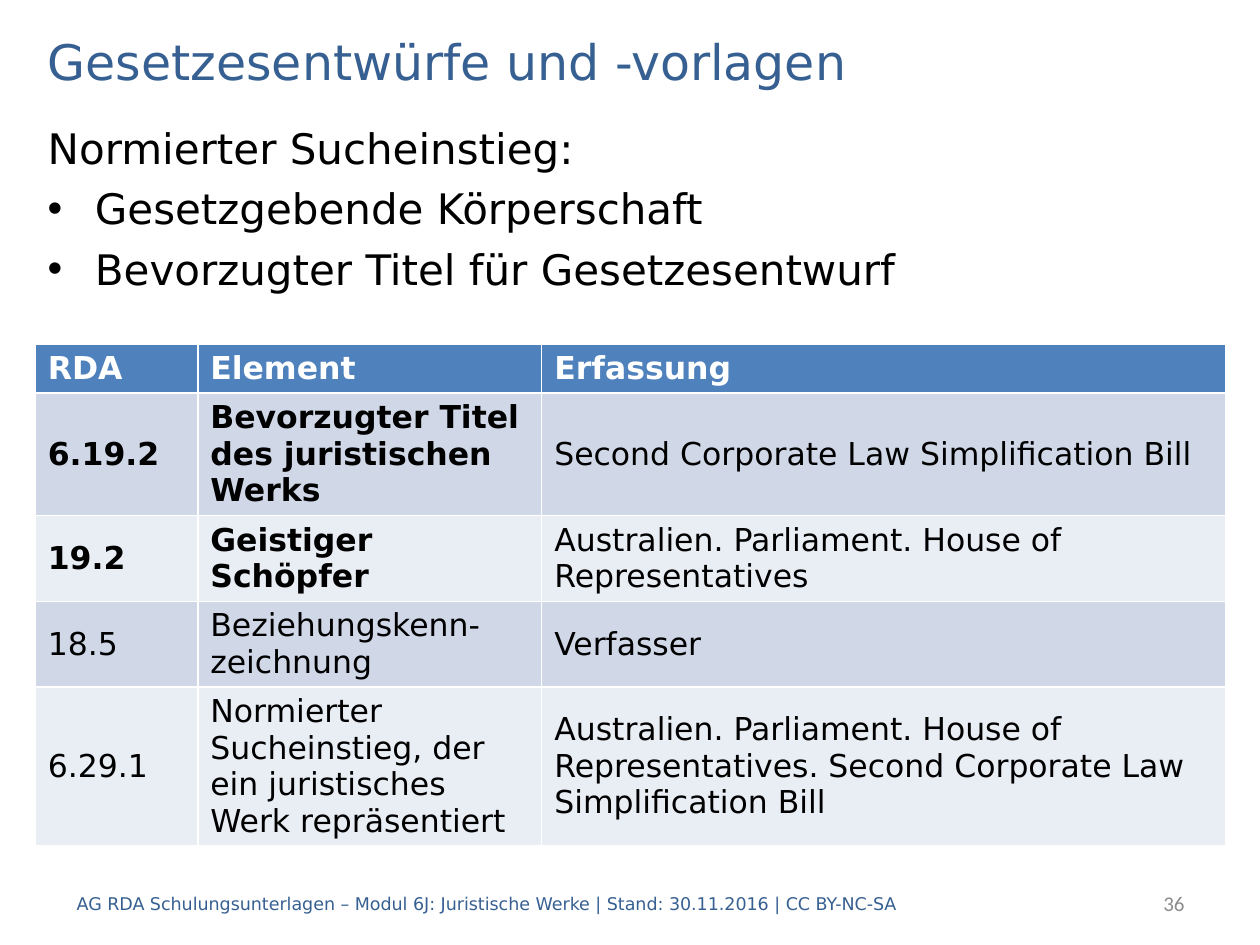
from lxml import etree
from pptx import Presentation
from pptx.dml.color import RGBColor
from pptx.enum.text import MSO_ANCHOR, MSO_AUTO_SIZE, PP_ALIGN
from pptx.oxml.ns import qn
from pptx.util import Pt

MIDDLE, TOP = MSO_ANCHOR.MIDDLE, MSO_ANCHOR.TOP
LEFT, RIGHT = PP_ALIGN.LEFT, PP_ALIGN.RIGHT
NO_FIT = MSO_AUTO_SIZE.NONE

BLUE = RGBColor(0x37, 0x60, 0x92)
HEADER_BLUE = RGBColor(0x4F, 0x81, 0xBD)
BAND_DARK = RGBColor(0xD0, 0xD8, 0xE8)
BAND_LIGHT = RGBColor(0xE9, 0xED, 0xF4)
GREY = RGBColor(0x8C, 0x8C, 0x8C)
BLACK = RGBColor(0, 0, 0)
WHITE = RGBColor(0xFF, 0xFF, 0xFF)
FONT = "DejaVu Sans"
MARGIN, WIDTH = 20.16, 680.4


def format_para(para, size, color, font=FONT, bold=False, align=LEFT):
    para.alignment = align
    for span in para.runs:
        span.font.name = font
        span.font.size = Pt(size)
        span.font.color.rgb = color
        span.font.bold = bold


def add_text(page, left, top, width, height, text, anchor):
    box = page.shapes.add_textbox(Pt(left), Pt(top), Pt(width), Pt(height))
    frame = box.text_frame
    frame.word_wrap = True
    frame.auto_size = NO_FIT
    frame.vertical_anchor = anchor
    frame.text = text
    return frame.paragraphs


deck = Presentation()
deck.slide_width, deck.slide_height = Pt(720), Pt(540)
page = deck.slides.add_slide(deck.slide_layouts[5])

title = page.shapes.title
title.left, title.top = Pt(MARGIN), Pt(14.4)
title.width, title.height = Pt(WIDTH), Pt(40.32)
title.text_frame.text = "Gesetzesentwürfe und -vorlagen"
title.text_frame.auto_size = NO_FIT
title.text_frame.vertical_anchor = MIDDLE
format_para(title.text_frame.paragraphs[0], 28, BLUE)

body_text = "\n".join([
    "Normierter Sucheinstieg:",
    "Gesetzgebende Körperschaft",
    "Bevorzugter Titel für Gesetzesentwurf",
])
body = add_text(page, MARGIN, 66.24, WIDTH, 430.56, body_text, TOP)
for index, para in enumerate(body):
    format_para(para, 24, BLACK)
    para.space_before = Pt(5.8)
    properties = para._p.get_or_add_pPr()
    properties.set("marL", str(Pt(27)))
    properties.set("indent", str(Pt(-27)))
    if index > 0:
        etree.SubElement(properties, qn("a:buFont"), typeface="Arial")
        etree.SubElement(properties, qn("a:buChar"), char="•")

rows = [
    ("RDA", "Element", "Erfassung"),
    ("6.19.2", "Bevorzugter Titel des juristischen Werks",
     "Second Corporate Law Simplification Bill"),
    ("19.2", "Geistiger Schöpfer",
     "Australien. Parliament. House of Representatives"),
    ("18.5", "Beziehungskenn-zeichnung", "Verfasser"),
    ("6.29.1",
     "Normierter Sucheinstieg, der ein juristisches Werk repräsentiert",
     "Australien. Parliament. House of Representatives. "
     "Second Corporate Law Simplification Bill"),
]
column_widths = [92.88, 196.56, 390.96]
row_heights = [26, 46, 26, 26, 46]
table = page.shapes.add_table(
    len(rows), len(column_widths), Pt(MARGIN), Pt(196.56),
    Pt(WIDTH), Pt(sum(row_heights))).table
for column, width in zip(table.columns, column_widths):
    column.width = Pt(width)
for row_index, texts in enumerate(rows):
    table.rows[row_index].height = Pt(row_heights[row_index])
    is_header = row_index == 0
    band = BAND_DARK if row_index % 2 else BAND_LIGHT
    for column_index, text in enumerate(texts):
        cell = table.cell(row_index, column_index)
        cell.text = text
        cell.fill.solid()
        cell.fill.fore_color.rgb = HEADER_BLUE if is_header else band
        para = cell.text_frame.paragraphs[0]
        is_bold = is_header or (row_index <= 2 and column_index <= 1)
        format_para(para, 18, WHITE if is_header else BLACK, bold=is_bold)
        if not is_header:
            cell.vertical_anchor = MIDDLE
            para.space_before = para.space_after = Pt(6)

number = add_text(page, 569.52, 501.84, 114.48, 28.8, "36", MIDDLE)
format_para(number[0], 12, GREY, font="Calibri", align=RIGHT)

footer_text = ("AG RDA Schulungsunterlagen – Modul 6J: Juristische Werke"
               " | Stand: 30.11.2016 | CC BY-NC-SA")
footer = add_text(page, 36.72, 501.84, 510.48, 28.8, footer_text, MIDDLE)
format_para(footer[0], 10, BLUE)

deck.save("out.pptx")
